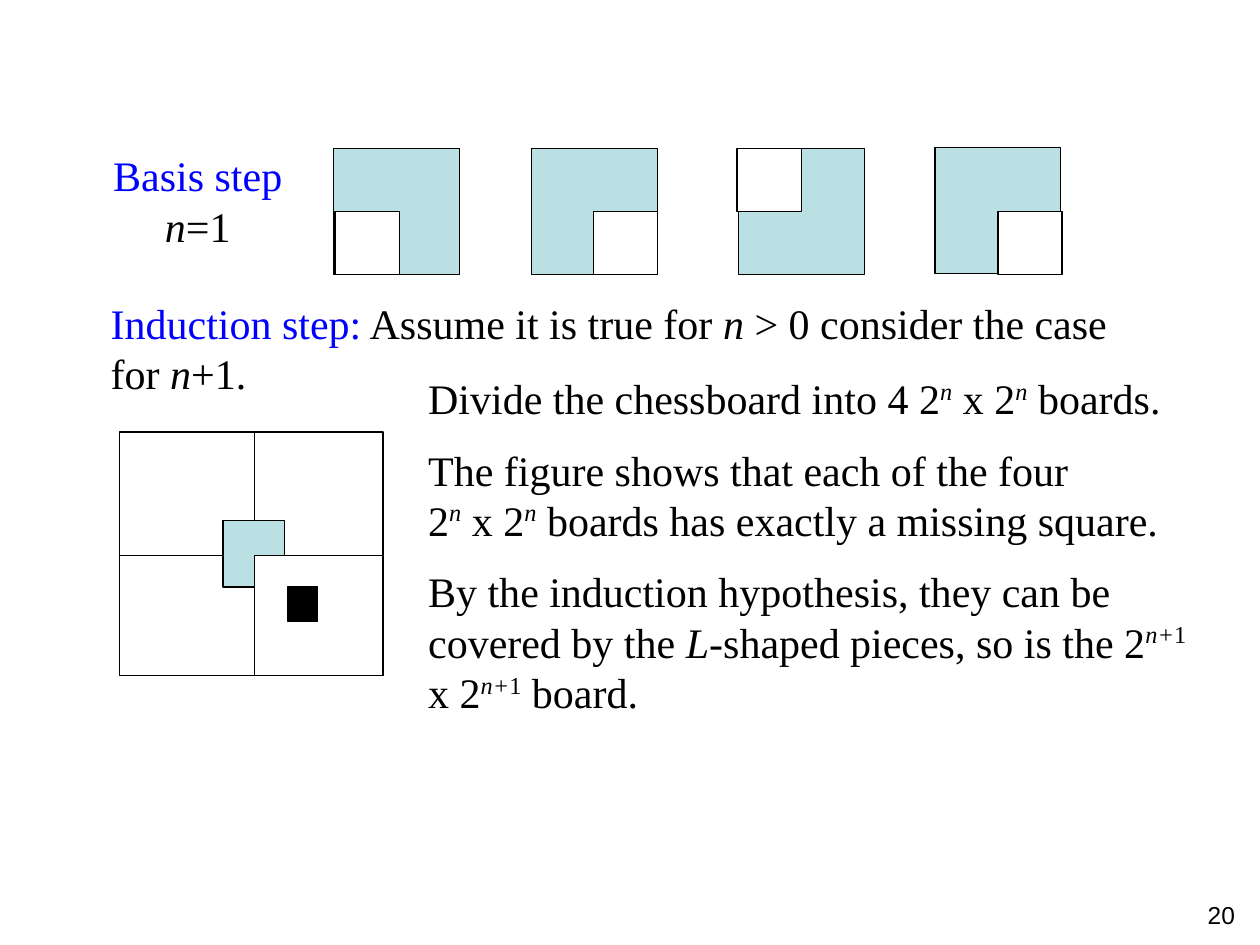
from pptx import Presentation
from pptx.dml.color import RGBColor
from pptx.enum import shapes, text
from pptx.oxml.ns import qn
from pptx.util import Inches, Pt
from lxml import etree

COLORS = {"black": "000000", "white": "FFFFFF", "blue": "0000FF", "piece": "BBE0E3"}


def rgb(name):
    return RGBColor.from_string(COLORS[name])


def add_text(s, box, paragraphs, size=24, font="Times New Roman",
             align=text.PP_ALIGN.LEFT, wrap=True, anchor=text.MSO_ANCHOR.TOP):
    sp = s.shapes.add_textbox(*map(Inches, box))
    tf = sp.text_frame
    tf.word_wrap = wrap
    tf.vertical_anchor = anchor
    for i, runs in enumerate(paragraphs):
        p = tf.paragraphs[0] if i == 0 else tf.add_paragraph()
        p.alignment = align
        for words, style in runs:
            if style == "break":
                p.add_line_break()
                continue
            r = p.add_run()
            r.text = words
            r.font.name, r.font.size = font, Pt(size)
            r.font.italic = "italic" in style
            r.font.color.rgb = rgb("blue" if "blue" in style else "black")
            if "super" in style:
                r.font._element.set("baseline", "35000")
    return tf


def add_rect(s, box, fill=None):
    sp = s.shapes.add_shape(shapes.MSO_SHAPE.RECTANGLE, *map(Inches, box))
    sp.shadow.inherit = False
    if fill:
        sp.fill.solid()
        sp.fill.fore_color.rgb = rgb(fill)
    else:
        sp.fill.background()
    sp.line.color.rgb = rgb("black")
    sp.line.width = Pt(0.75)


def add_line(s, x1, y1, x2, y2):
    line = s.shapes.add_connector(shapes.MSO_CONNECTOR.STRAIGHT,
                                  *map(Inches, (x1, y1, x2, y2)))
    line.line.color.rgb = rgb("black")
    line.line.width = Pt(0.75)
    etree.SubElement(line._element.spPr, qn("a:effectLst"))


def add_basis(s, left, top):
    add_text(s, (left, top, 1.54, 0.9),
             [[("Basis step", "blue")], [("n", "italic"), ("=1", "")]],
             align=text.PP_ALIGN.CENTER, wrap=False)
    pieces = [(1.85, 0.04, 0.01, 0.5), (3.42, 0.04, 0.49, 0.5),
              (5.06, 0.04, -0.01, 0), (6.62, 0.03, 0.5, 0.51)]
    for x, y, dx, dy in pieces:
        add_rect(s, (left + x, top + y, 1, 1), "piece")
        add_rect(s, (left + x + dx, top + y + dy, 0.51, 0.5), "white")


def add_induction(s, box):
    add_text(s, box, [[
        ("Induction step:", "blue"), (" Assume it is true for ", ""), ("n", "italic"),
        (" > 0 consider the case for ", ""), ("n", "italic"), ("+1.", "")]])


def add_board(s, left, top, width, height):
    mid_x, mid_y = left + 1.07, top + 0.98
    right, bottom = left + width, top + height
    add_rect(s, (left, top, width, height))
    add_line(s, mid_x, top, mid_x, bottom)
    add_line(s, left, mid_y, right, mid_y)
    add_rect(s, (mid_x - 0.25, mid_y - 0.28, 0.49, 0.53), "piece")
    add_rect(s, (mid_x, mid_y, right - mid_x, bottom - mid_y), "white")
    add_rect(s, (mid_x + 0.26, mid_y + 0.25, 0.24, 0.27), "black")


def add_argument(s, box):
    power = ("n", "italic super")
    next_power = [("n+", "italic super"), ("1", "super")]
    size = [power, (" x 2", ""), power]
    tf = add_text(s, box, [
        [("Divide the chessboard into 4 2", ""), *size, (" boards.", "")],
        [("The figure shows that each of the four ", ""), ("", "break"), ("2", ""), *size,
         (" boards has exactly a missing square.", "")],
        [("By the induction hypothesis, they can be covered by the ", ""), ("L", "italic"),
         ("-shaped pieces, so is the 2", ""), *next_power, (" x 2", ""), *next_power,
         (" board.", "")]])
    for p in tf.paragraphs[1:]:
        p.space_before = Pt(12)


def add_page_number(s, box):
    add_text(s, box, [[("20", "")]], size=14, font="Arial", align=text.PP_ALIGN.RIGHT)


def main():
    prs = Presentation()
    prs.slide_width, prs.slide_height = Inches(10), Inches(7.5)
    s = prs.slides.add_slide(prs.slide_layouts[6])
    add_page_number(s, (7.57, 7.09, 2.33, 0.31))
    add_basis(s, 0.8, 1.14)
    add_induction(s, (0.78, 2.31, 8.25, 0.9))
    add_board(s, 0.95, 3.43, 2.09, 1.93)
    add_argument(s, (3.3, 2.91, 6.23, 2.9))
    prs.save("out.pptx")


if __name__ == "__main__":
    main()
